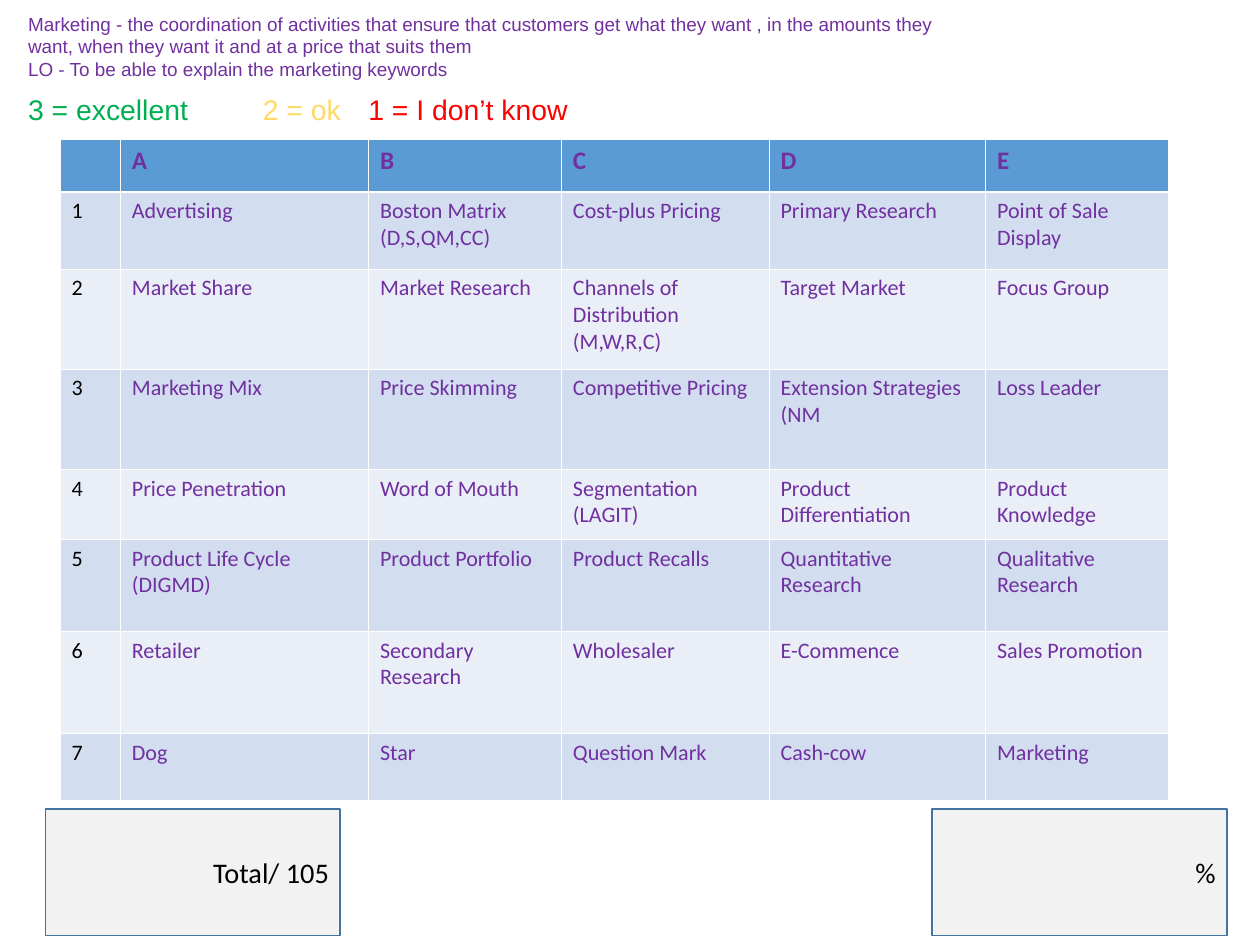
"""Build the marketing keywords self-assessment slide."""
from pptx import Presentation
from pptx.dml.color import RGBColor
from pptx.enum import shapes, text
from pptx.util import Cm, Pt

COLOURS = {
    "purple": "7030A0", "green": "00B050", "yellow": "FFD966", "red": "FF0000",
    "black": "000000", "header": "5B9BD5", "odd": "D2DEEF", "even": "EAEFF7",
    "box": "F2F2F2", "outline": "43739E",
}
INTRO = [
    "Marketing - the coordination of activities that ensure that customers get what they want , in the amounts they",
    "want, when they want it and at a price that suits them",
    "LO - To be able to explain the marketing keywords",
]
SCALE = [("3 = excellent\t\t ", "green"), ("2 = ok \t", "yellow"), ("1 = I don’t know", "red")]
KEYWORDS = [
    ("", "A", "B", "C", "D", "E"),
    ("1", "Advertising", "Boston Matrix\n(D,S,QM,CC)", "Cost-plus Pricing",
     "Primary Research", "Point of Sale Display"),
    ("2", "Market Share", "Market Research", "Channels of Distribution\n(M,W,R,C)",
     "Target Market", "Focus Group"),
    ("3", "Marketing Mix", "Price Skimming", "Competitive Pricing",
     "Extension Strategies\n(NM", "Loss Leader"),
    ("4", "Price Penetration", "Word of Mouth", "Segmentation (LAGIT)",
     "Product Differentiation", "Product Knowledge"),
    ("5", "Product Life Cycle\n(DIGMD)", "Product Portfolio", "Product Recalls",
     "Quantitative Research", "Qualitative\nResearch"),
    ("6", "Retailer", "Secondary Research", "Wholesaler", "E-Commence", "Sales Promotion"),
    ("7", "Dog", "Star", "Question Mark", "Cash-cow", "Marketing"),
]
COLUMN_WIDTHS = [1.35, 5.56, 4.32, 4.65, 4.85, 4.09]
ROW_HEIGHTS = [1.17, 1.73, 2.24, 2.24, 1.57, 2.06, 2.29, 1.5]
RESULTS = [("%", 20.88), ("Total/ 105", 1.02)]


def rgb(name):
    return RGBColor.from_string(COLOURS[name])


def paint(part, name):
    part.fill.solid()
    part.fill.fore_color.rgb = rgb(name)


def write(frame, lines, size, font, bold=False, align=None):
    """Fill a frame with lines, each a list of (words, colour) runs."""
    for index, line in enumerate(lines):
        paragraph = frame.add_paragraph() if index else frame.paragraphs[0]
        paragraph.alignment = align
        for words, colour in line:
            run = paragraph.add_run()
            run.text = words
            run.font.name, run.font.size, run.font.bold = font, Pt(size), bold
            run.font.color.rgb = rgb(colour)


def add_heading(slide, box, lines, size):
    frame = slide.shapes.add_textbox(*map(Cm, box)).text_frame
    frame.word_wrap = True
    frame.auto_size = text.MSO_AUTO_SIZE.SHAPE_TO_FIT_TEXT
    write(frame, lines, size, "Arial")


def add_keywords(slide):
    grid = slide.shapes.add_table(
        len(ROW_HEIGHTS), len(COLUMN_WIDTHS), Cm(1.35), Cm(3.13),
        Cm(sum(COLUMN_WIDTHS)), Cm(sum(ROW_HEIGHTS))).table
    for column, width in zip(grid.columns, COLUMN_WIDTHS):
        column.width = Cm(width)
    for r, (keywords, height) in enumerate(zip(KEYWORDS, ROW_HEIGHTS)):
        grid.rows[r].height = Cm(height)
        band = "header" if r == 0 else "odd" if r % 2 else "even"
        for c, keyword in enumerate(keywords):
            cell = grid.cell(r, c)
            paint(cell, band)
            if keyword:
                lines = [[(line, "purple" if c else "black")] for line in keyword.split("\n")]
                write(cell.text_frame, lines, 14 if r else 16, "Calibri", bold=r == 0)


def add_result(slide, label, left):
    result = slide.shapes.add_shape(
        shapes.MSO_SHAPE.RECTANGLE, Cm(left), Cm(18.11), Cm(6.6), Cm(2.84))
    result.shadow.inherit = False
    paint(result, "box")
    result.line.color.rgb = rgb("outline")
    result.line.width = Pt(1)
    result.text_frame.vertical_anchor = text.MSO_ANCHOR.MIDDLE
    write(result.text_frame, [[(label, "black")]], 18, "Calibri", align=text.PP_ALIGN.RIGHT)


def main():
    deck = Presentation()
    deck.slide_width, deck.slide_height = Cm(28.22), Cm(21.16)
    slide = deck.slides.add_slide(deck.slide_layouts[6])
    add_heading(slide, (0.38, 0.15, 27.4, 1.8), [[(line, "purple")] for line in INTRO], 12)
    add_keywords(slide)
    for label, left in RESULTS:
        add_result(slide, label, left)
    add_heading(slide, (0.38, 1.93, 21.39, 1.02), [SCALE], 18)
    deck.save("out.pptx")


if __name__ == "__main__":
    main()
